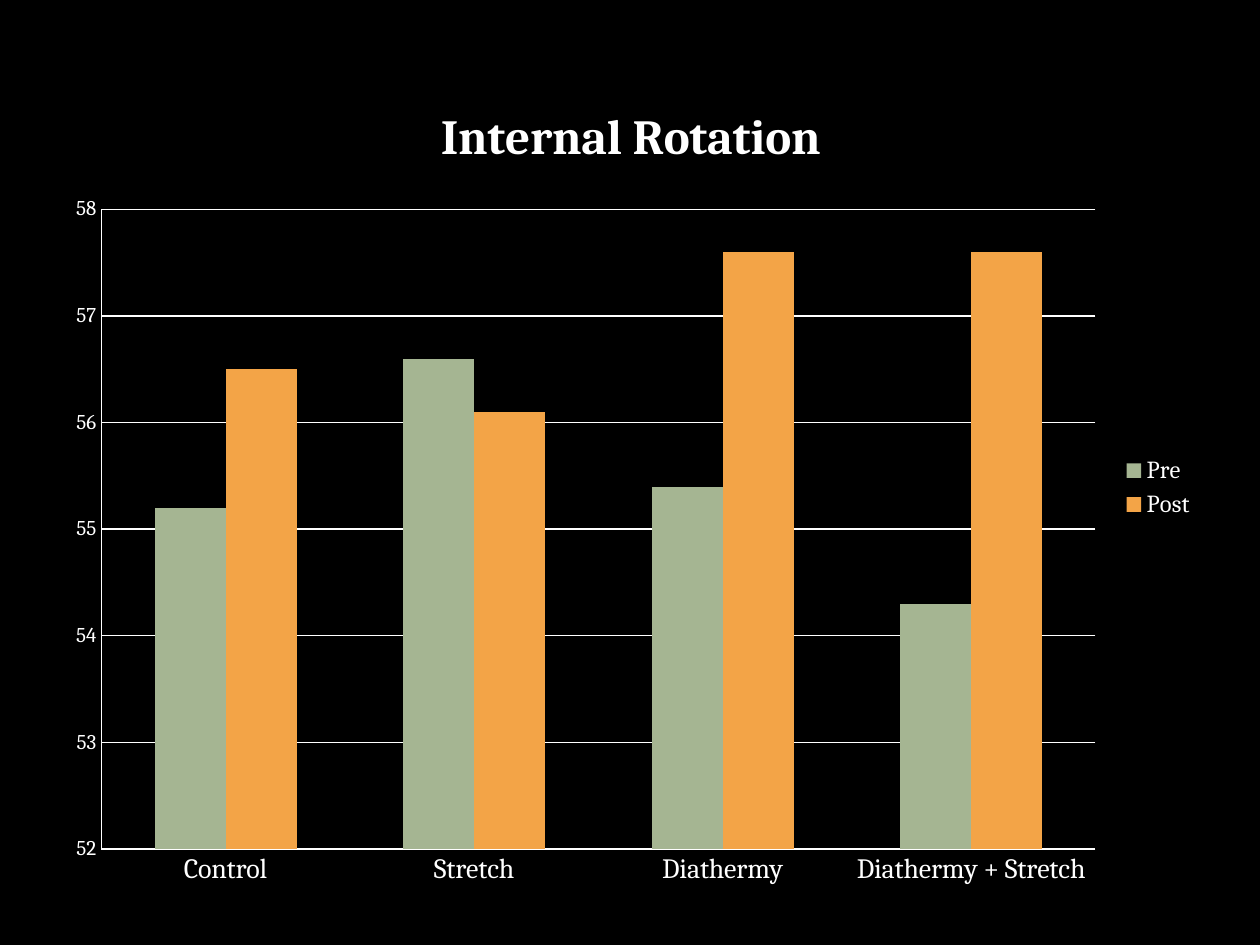
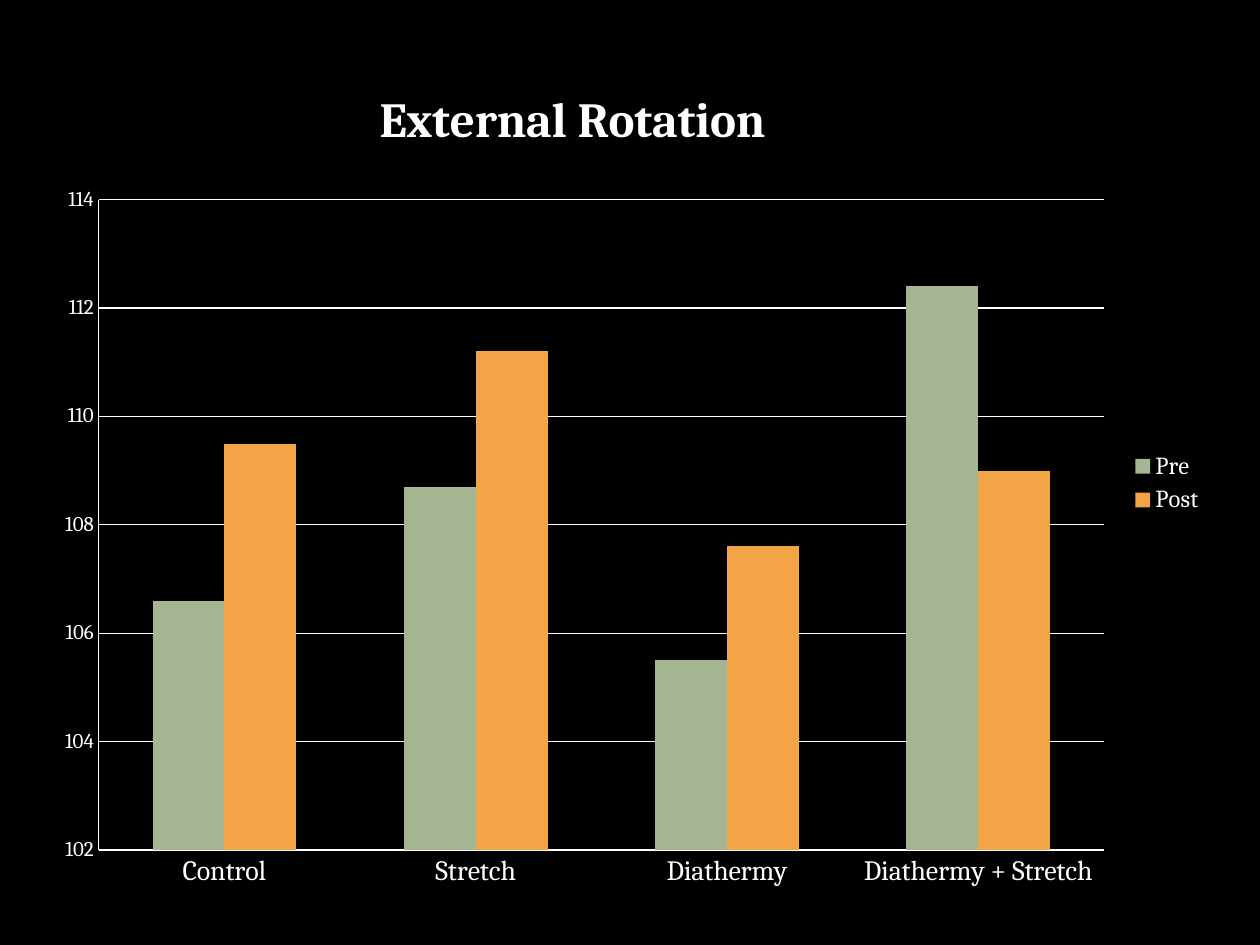
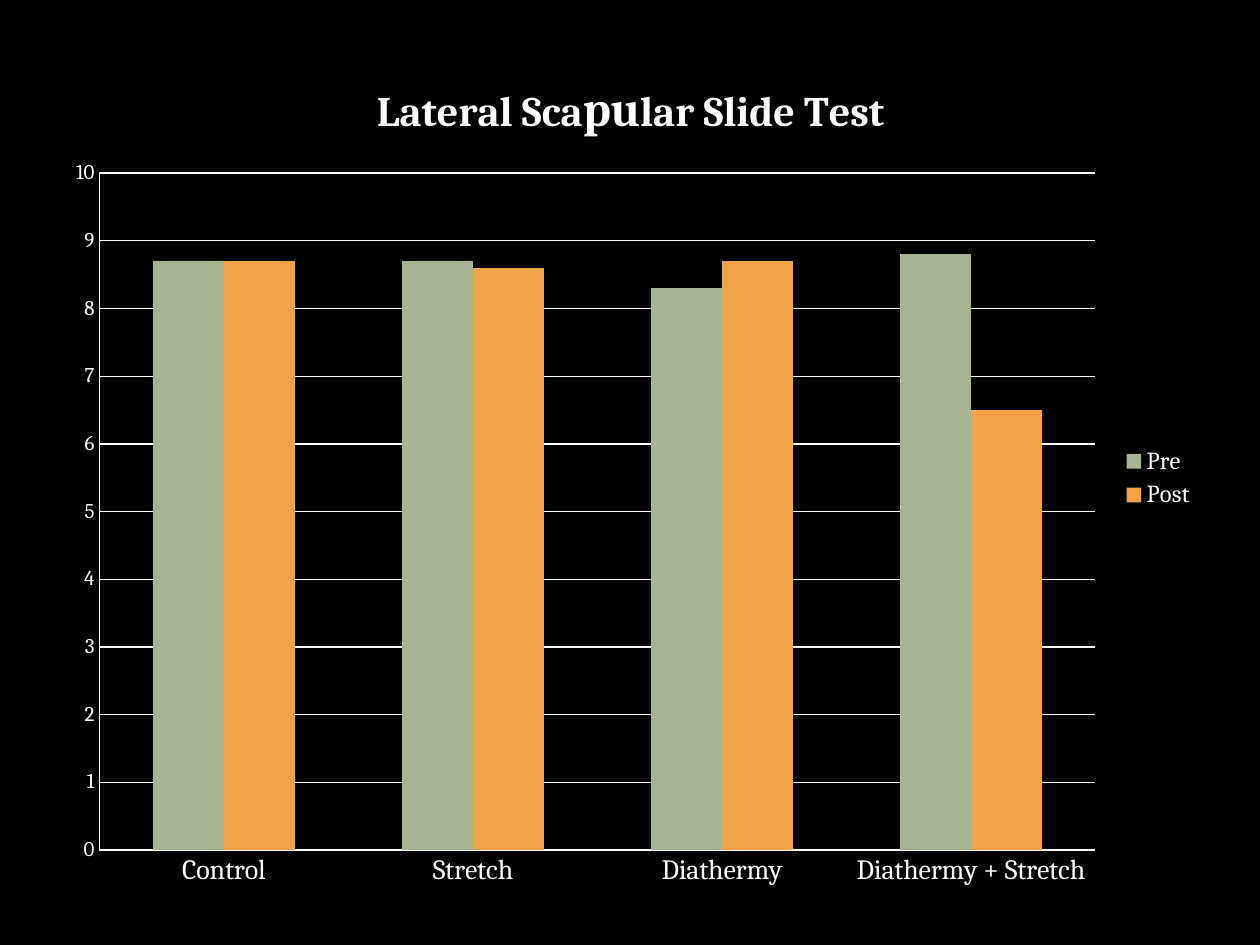
from lxml.etree import SubElement
from pptx import Presentation
from pptx.chart.data import CategoryChartData
from pptx.dml.color import RGBColor
from pptx.enum.chart import XL_CHART_TYPE as ChartType
from pptx.enum.chart import XL_LEGEND_POSITION as LegendPosition
from pptx.enum.chart import XL_TICK_MARK as TickMark
from pptx.oxml.ns import qn
from pptx.util import Inches, Pt

BLACK = RGBColor(0x00, 0x00, 0x00)
WHITE = RGBColor(0xFF, 0xFF, 0xFF)
SAGE = RGBColor(0xA5, 0xB5, 0x92)
ORANGE = RGBColor(0xF3, 0xA4, 0x47)
FONT = "Cambria"
GROUPS = ("Control", "Stretch", "Diathermy", "Diathermy + Stretch")
BLANK_LAYOUT = 6


class Deck:
    def __init__(self):
        self.presentation = Presentation()
        self.presentation.slide_width = Inches(10)
        self.presentation.slide_height = Inches(7.5)
        background = self.presentation.slide_master.background.fill
        background.solid()
        background.fore_color.rgb = BLACK
        self.slide = None

    def new_slide(self):
        layout = self.presentation.slide_layouts[BLANK_LAYOUT]
        self.slide = self.presentation.slides.add_slide(layout)

    def style_font(self, font, size, bold=False):
        font.name = FONT
        font.size = Pt(size)
        font.bold = bold
        font.color.rgb = WHITE

    def style_line(self, line):
        line.color.rgb = WHITE
        line.width = Pt(0.75)

    def style_axis(self, axis, size):
        axis.major_tick_mark = TickMark.NONE
        axis.minor_tick_mark = TickMark.NONE
        self.style_font(axis.tick_labels.font, size)
        self.style_line(axis.format.line)

    def chart_title(self, chart, runs, position):
        title = chart.chart_title
        title.include_in_layout = False
        paragraph = title.text_frame.paragraphs[0]
        self.style_font(paragraph.font, runs[0][1], bold=True)
        for text, size in runs:
            run = paragraph.add_run()
            run.text = text
            self.style_font(run.font, size, bold=True)
        if position:
            self.place_title(title, *position)

    def place_title(self, title, left, top):
        element = title._element
        layout = element.find(qn("c:layout"))
        if layout is None:
            layout = SubElement(element, qn("c:layout"))
            element.find(qn("c:tx")).addnext(layout)
        manual = SubElement(layout, qn("c:manualLayout"))
        settings = (("xMode", "edge"), ("yMode", "edge"), ("x", left), ("y", top))
        for tag, value in settings:
            SubElement(manual, qn(f"c:{tag}")).set("val", str(value))

    def comparison_chart(self, box, title_runs, pre, post, scale, title_position=None):
        data = CategoryChartData(number_format="General")
        data.categories = GROUPS
        data.add_series("Pre", pre)
        data.add_series("Post", post)
        frame = self.slide.shapes.add_chart(
            ChartType.COLUMN_CLUSTERED, *map(Inches, box), data
        )
        chart = frame.chart
        self.style_font(chart.font, 10)
        self.chart_title(chart, title_runs, title_position)

        plot = chart.plots[0]
        plot.vary_by_categories = False
        plot.gap_width = 150
        plot.overlap = 0
        for series, color in zip(plot.series, (SAGE, ORANGE)):
            series.invert_if_negative = False
            series.format.fill.solid()
            series.format.fill.fore_color.rgb = color

        self.style_axis(chart.category_axis, 16)
        values = chart.value_axis
        self.style_axis(values, 12)
        values.minimum_scale, values.maximum_scale, values.major_unit = scale
        values.has_major_gridlines = True
        self.style_line(values.major_gridlines.format.line)

        chart.has_legend = True
        chart.legend.position = LegendPosition.RIGHT
        chart.legend.include_in_layout = False
        self.style_font(chart.legend.font, 14)


def main():
    deck = Deck()

    deck.new_slide()
    deck.comparison_chart(
        box=(0.42, 0.58, 9.17, 6.58),
        title_runs=[("Internal Rotation", 28)],
        pre=(55.2, 56.6, 55.4, 54.3),
        post=(56.5, 56.1, 57.6, 57.6),
        scale=(52, 58, 1),
    )

    deck.new_slide()
    deck.comparison_chart(
        box=(0.33, 0.5, 9.33, 6.67),
        title_runs=[("External Rotation", 28)],
        pre=(106.6, 108.7, 105.5, 112.4),
        post=(109.5, 111.2, 107.6, 109),
        scale=(102, 114, 2),
        title_position=(0.28, 0.02),
    )

    deck.new_slide()
    deck.comparison_chart(
        box=(0.42, 0.42, 9.17, 6.75),
        title_runs=[("Lateral Sca", 24), ("pu", 28), ("lar Slide Test", 24)],
        pre=(8.7, 8.7, 8.3, 8.8),
        post=(8.7, 8.6, 8.7, 6.5),
        scale=(0, 10, 1),
    )

    deck.presentation.save("out.pptx")


if __name__ == "__main__":
    main()
